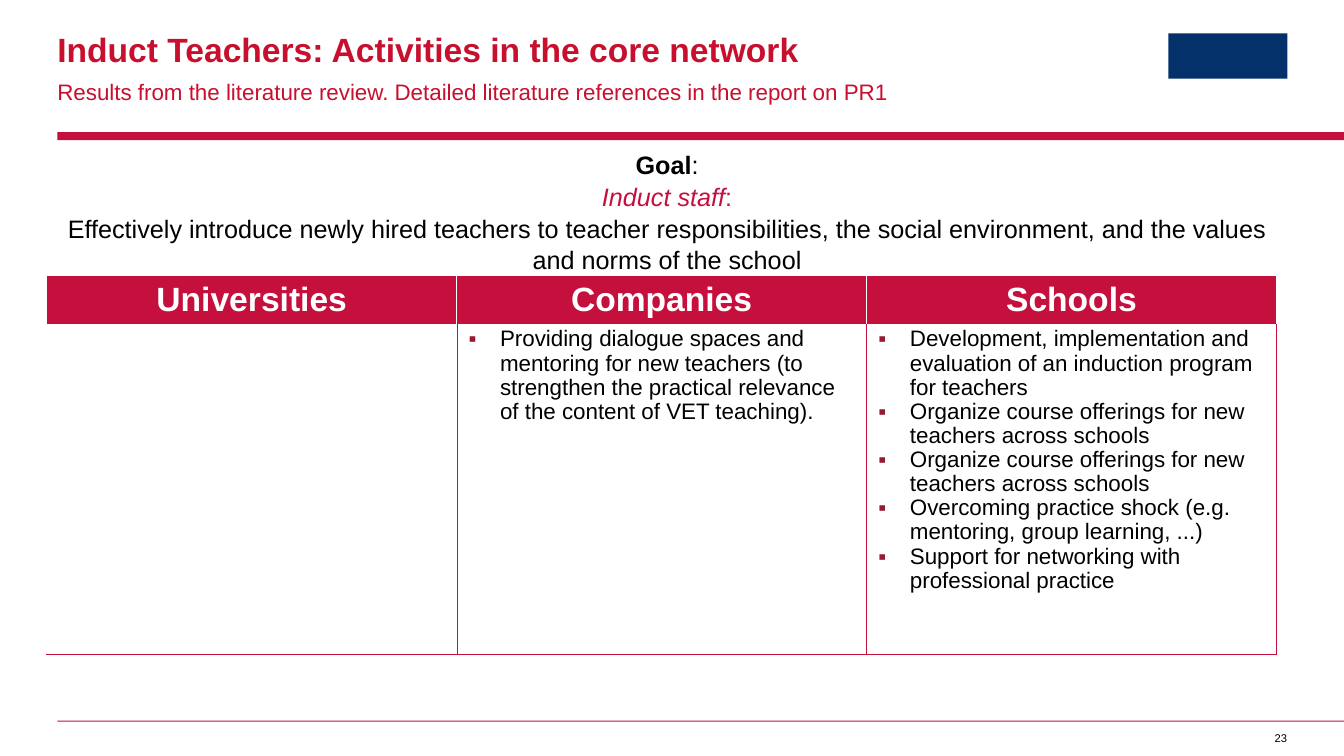
from lxml import etree
from pptx import Presentation
from pptx.dml.color import RGBColor
from pptx.enum import shapes, text
from pptx.oxml import ns
from pptx.util import Pt

COLORS = {
    "crimson": "C50F3C",
    "heading": "C80F2E",
    "bullet": "971B2F",
    "navy": "04316A",
    "black": "000000",
    "white": "FFFFFF",
}
FONT = "Arial"
LEFT = 41
RULE_WIDTH = 919

ACTIVITIES = {
    "Universities": [],
    "Companies": [
        "Providing dialogue spaces and mentoring for new teachers (to strengthen "
        "the practical relevance of the content of VET teaching).",
    ],
    "Schools": [
        "Development, implementation and evaluation of an induction program for teachers",
        "Organize course offerings for new teachers across schools",
        "Organize course offerings for new teachers across schools",
        "Overcoming practice shock (e.g. mentoring, group learning, ...)",
        "Support for networking with professional practice",
    ],
}


def rgb(color):
    return RGBColor.from_string(COLORS[color])


def add_run(paragraph, wording, size, color="black", bold=False, italic=False):
    run = paragraph.add_run()
    run.text = wording
    font = run.font
    font.name, font.size = FONT, Pt(size)
    font.bold, font.italic = bold, italic
    font.color.rgb = rgb(color)


def add_block(slide, left, top, width, height, color):
    block = slide.shapes.add_shape(
        shapes.MSO_SHAPE.RECTANGLE, Pt(left), Pt(top), Pt(width), Pt(height))
    block.shadow.inherit = False
    block.fill.solid()
    block.fill.fore_color.rgb = rgb(color)
    block.line.fill.background()


def set_margins(frame, left=0, top=0, right=0, bottom=0):
    frame.margin_left, frame.margin_top = Pt(left), Pt(top)
    frame.margin_right, frame.margin_bottom = Pt(right), Pt(bottom)


def add_text_frame(slide, left, top, width, height, wrap=True):
    frame = slide.shapes.add_textbox(
        Pt(left), Pt(top), Pt(width), Pt(height)).text_frame
    frame.word_wrap = wrap
    return frame


def add_title(slide):
    title = slide.shapes.title
    title.left, title.top = Pt(LEFT), Pt(23.8)
    title.width, title.height = Pt(646.6), Pt(26)
    frame = title.text_frame
    set_margins(frame)
    frame.word_wrap = True
    frame.auto_size = text.MSO_AUTO_SIZE.NONE
    frame.vertical_anchor = text.MSO_ANCHOR.TOP
    heading = frame.paragraphs[0]
    heading.alignment = text.PP_ALIGN.LEFT
    heading.line_spacing = 0.9
    add_run(heading, "Induct Teachers: Activities in the core network", 24, "heading", bold=True)


def add_subtitle(slide):
    frame = add_text_frame(slide, LEFT, 54, 671.8, 19.4)
    set_margins(frame, right=28)
    subtitle = frame.paragraphs[0]
    subtitle.line_spacing = 1.1
    add_run(subtitle, "Results from the literature review. Detailed literature "
            "references in the report on PR1", 16, "heading")


def add_goal(slide):
    frame = add_text_frame(slide, LEFT, 102.2, 871, 94.3)
    goal, induction = frame.paragraphs[0], frame.add_paragraph()
    for paragraph in (goal, induction):
        paragraph.alignment = text.PP_ALIGN.CENTER
        paragraph.line_spacing = 1.05
    add_run(goal, "Goal", 18, bold=True)
    add_run(goal, ":", 18)
    add_run(induction, "Induct staff", 18, "crimson", italic=True)
    add_run(induction, ":", 18, "crimson")
    induction.add_line_break()
    add_run(induction, "Effectively introduce newly hired teachers to teacher "
            "responsibilities, the social environment, and the values and norms "
            "of the school", 18)


def add_page_number(slide):
    frame = add_text_frame(slide, 904.3, 522.7, 15.1, 9.4, wrap=False)
    set_margins(frame)
    number = frame.paragraphs[0]
    number.alignment = text.PP_ALIGN.RIGHT
    add_run(number, "23", 8)


def add_bullet(paragraph):
    """Give the paragraph a hanging square bullet."""
    props = paragraph._p.get_or_add_pPr()
    props.set("marL", str(Pt(22.5)))
    props.set("indent", str(-Pt(22.5)))
    bullet_color = etree.SubElement(props, ns.qn("a:buClr"))
    etree.SubElement(bullet_color, ns.qn("a:srgbClr"), val=COLORS["bullet"])
    etree.SubElement(props, ns.qn("a:buFont"), typeface=FONT)
    etree.SubElement(props, ns.qn("a:buChar"), char="▪")


def set_borders(cell, **edges):
    """Draw the edges L, R, T, B given as (color, width); hide the others."""
    props = cell._tc.get_or_add_tcPr()
    for side in "LRTB":
        line = etree.SubElement(props, ns.qn(f"a:ln{side}"))
        if side in edges:
            color, width = edges[side]
            line.set("w", str(Pt(width)))
            fill = etree.SubElement(line, ns.qn("a:solidFill"))
            etree.SubElement(fill, ns.qn("a:srgbClr"), val=COLORS[color])
        else:
            etree.SubElement(line, ns.qn("a:noFill"))


def fill_header(cell, partner):
    set_margins(cell, 8.5, 2.8, 8.5, 2.8)
    set_borders(cell, L=("white", 0.5), R=("white", 0.5), T=("white", 1))
    cell.fill.solid()
    cell.fill.fore_color.rgb = rgb("crimson")
    cell.vertical_anchor = text.MSO_ANCHOR.MIDDLE
    heading = cell.text_frame.paragraphs[0]
    heading.alignment = text.PP_ALIGN.CENTER
    add_run(heading, partner, 24, "white", bold=True)


def fill_activities(cell, activities, left_edge):
    set_margins(cell, 8.5, 2.8, 8.5, 2.8)
    thin = ("crimson", 0.25)
    set_borders(cell, L=left_edge, R=thin, B=thin)
    cell.fill.background()
    frame = cell.text_frame
    for index, wording in enumerate(activities):
        activity = frame.add_paragraph() if index else frame.paragraphs[0]
        add_bullet(activity)
        activity.level = 1
        activity.line_spacing = 0.97
        add_run(activity, wording, 16)


def add_activity_table(slide):
    row_heights = (33.1, 236.2)
    column_width = 292.8
    count = len(ACTIVITIES)
    table = slide.shapes.add_table(
        len(row_heights), count, Pt(33.4), Pt(196.8),
        Pt(column_width * count), Pt(sum(row_heights))).table
    table.horz_banding = False
    for row, height in zip(table.rows, row_heights):
        row.height = Pt(height)
    for column, (partner, activities) in enumerate(ACTIVITIES.items()):
        table.columns[column].width = Pt(column_width)
        fill_header(table.cell(0, column), partner)
        left_edge = ("crimson", 0.25) if column else ("white", 1)
        fill_activities(table.cell(1, column), activities, left_edge)


def main():
    deck = Presentation()
    deck.slide_width, deck.slide_height = Pt(960), Pt(540)
    slide = deck.slides.add_slide(deck.slide_layouts[5])
    add_block(slide, LEFT, 94.3, RULE_WIDTH, 5.8, "crimson")
    add_block(slide, LEFT, 514.8, RULE_WIDTH, 0.7, "crimson")
    add_block(slide, 834.5, 23.8, 85, 32.4, "navy")
    add_title(slide)
    add_page_number(slide)
    add_activity_table(slide)
    add_goal(slide)
    add_subtitle(slide)
    deck.save("out.pptx")


if __name__ == "__main__":
    main()
